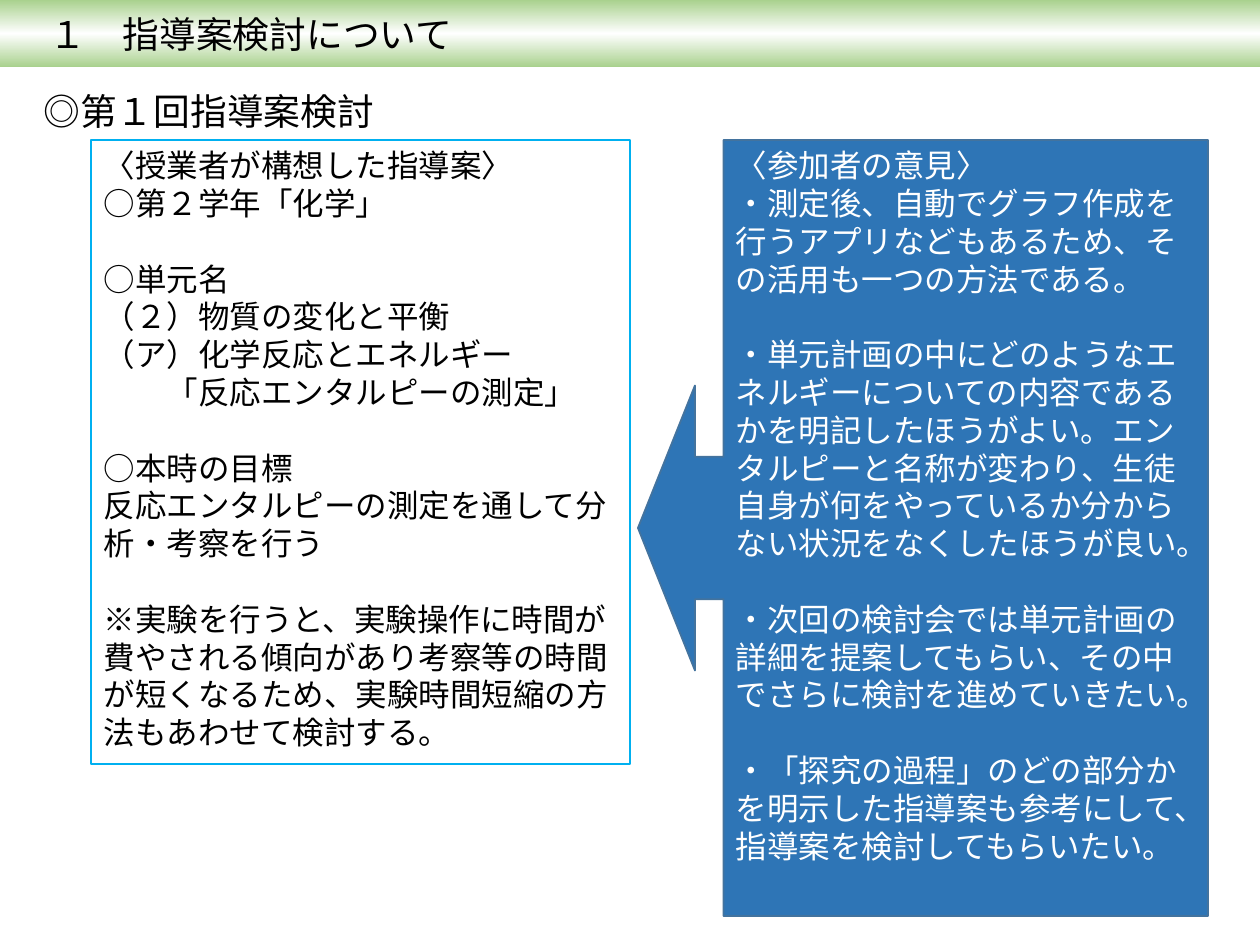
from copy import deepcopy
from dataclasses import dataclass

from lxml import etree
from pptx import Presentation
from pptx.dml.color import RGBColor
from pptx.enum.shapes import MSO_SHAPE
from pptx.enum.text import MSO_ANCHOR, MSO_AUTO_SIZE, PP_ALIGN
from pptx.oxml.ns import qn
from pptx.util import Emu, Pt

CALLOUT = MSO_SHAPE.LEFT_ARROW_CALLOUT
LEFT = PP_ALIGN.LEFT
TOP, MIDDLE = MSO_ANCHOR.TOP, MSO_ANCHOR.MIDDLE
NO_FIT = MSO_AUTO_SIZE.NONE
PX = 914400 // 126


@dataclass(frozen=True)
class Theme:
    latin: str = "Calibri"
    asian: str = "Noto Sans CJK JP"
    head: int = 21
    body: int = 18
    gap: float = 21.6
    black: str = "000000"
    white: str = "FFFFFF"
    green: str = "A9D18E"
    cyan: str = "00B0F0"
    blue: str = "2E75B6"
    edge: str = "43739E"


THEME = Theme()

TITLE = "１　指導案検討について"
HEADING = "◎第１回指導案検討"
PLAN = [
    ["〈授業者が構想した指導案〉", "○第２学年「化学」"],
    ["○単元名", "（２）物質の変化と平衡", "（ア）化学反応とエネルギー",
     "「反応エンタルピーの測定」"],
    ["○本時の目標", "反応エンタルピーの測定を通して分析・考察を行う"],
    ["※実験を行うと、実験操作に時間が費やされる傾向があり考察等の時間が"
     "短くなるため、実験時間短縮の方法もあわせて検討する。"],
]
VIEWS = [
    ["〈参加者の意見〉",
     "・測定後、自動でグラフ作成を行うアプリなどもあるため、"
     "その活用も一つの方法である。"],
    ["・単元計画の中にどのようなエネルギーについての内容であるかを"
     "明記したほうがよい。エンタルピーと名称が変わり、"
     "生徒自身が何をやっているか分からない状況をなくしたほうが良い。"],
    ["・次回の検討会では単元計画の詳細を提案してもらい、"
     "その中でさらに検討を進めていきたい。"],
    ["・「探究の過程」のどの部分かを明示した指導案も参考にして、"
     "指導案を検討してもらいたい。"],
]


def rgb(code):
    return RGBColor.from_string(code)


def box(*sides):
    return [Emu(side * PX) for side in sides]


def place(shape, *sides):
    shape.left, shape.top, shape.width, shape.height = box(*sides)


def style(para, size, color, latin):
    """Left-align a paragraph without a bullet and set its fonts."""
    para.alignment = LEFT
    para.space_before = Pt(0)
    props = para._p.get_or_add_pPr()
    props.set("marL", "0")
    props.set("indent", "0")
    etree.SubElement(props, qn("a:buNone"))
    for run in para.runs:
        run.font.size = Pt(size)
        run.font.name = latin
        run.font.color.rgb = rgb(color)
        asian = etree.SubElement(run._r.get_or_add_rPr(), qn("a:ea"))
        asian.set("typeface", THEME.asian)


def write(shape, groups, size, color, latin=THEME.latin, anchor=TOP):
    """Fill a shape with groups of lines, one line of space between groups."""
    frame = shape.text_frame
    frame.text = "\n".join(line for group in groups for line in group)
    frame.word_wrap = True
    frame.auto_size = NO_FIT
    frame.vertical_anchor = anchor
    for para in frame.paragraphs:
        style(para, size, color, latin)
    start = 0
    for group in groups[:-1]:
        start += len(group)
        frame.paragraphs[start].space_before = Pt(THEME.gap)


def add_title(slide):
    bar = slide.shapes.title
    place(bar, 0, 0, 1260, 67)
    bar.fill.gradient()
    bar.fill.gradient_angle = 90
    ends = bar.fill.gradient_stops
    for stop, spot in zip(ends, (0, 1)):
        stop.position = spot
        stop.color.rgb = rgb(THEME.green)
    first = bar._element.spPr.find(".//" + qn("a:gs"))
    first.addnext(deepcopy(first))
    middle = bar.fill.gradient_stops[1]
    middle.position = 0.5
    middle.color.rgb = rgb(THEME.white)
    write(bar, [[TITLE]], THEME.head, THEME.black, THEME.asian, MIDDLE)
    bar.text_frame.margin_left = Emu(49 * PX)


def add_heading(slide):
    label = slide.shapes.add_textbox(*box(31, 83, 1045, 57))
    write(label, [[HEADING]], THEME.head, THEME.black)


def add_plan(slide):
    panel = slide.placeholders[1]
    place(panel, 91, 140, 539, 624)
    panel.line.color.rgb = rgb(THEME.cyan)
    panel.line.width = Pt(0.75)
    write(panel, PLAN, THEME.body, THEME.black)
    topic = panel.text_frame.paragraphs[5]
    topic._p.get_or_add_pPr().set("marL", str(Pt(2 * THEME.body)))


def add_views(slide):
    arrow = slide.shapes.add_shape(CALLOUT, *box(638, 140, 570, 776))
    for index, value in enumerate((0.25, 0.25, 0.1, 0.85)):
        arrow.adjustments[index] = value
    arrow.shadow.inherit = False
    arrow.fill.solid()
    arrow.fill.fore_color.rgb = rgb(THEME.blue)
    arrow.line.color.rgb = rgb(THEME.edge)
    arrow.line.width = Pt(1)
    write(arrow, VIEWS, THEME.body, THEME.white)


def main():
    deck = Presentation()
    deck.slide_width, deck.slide_height = box(1260, 945)
    slide = deck.slides.add_slide(deck.slide_layouts[1])
    add_title(slide)
    add_heading(slide)
    add_plan(slide)
    add_views(slide)
    deck.save("out.pptx")


if __name__ == "__main__":
    main()
